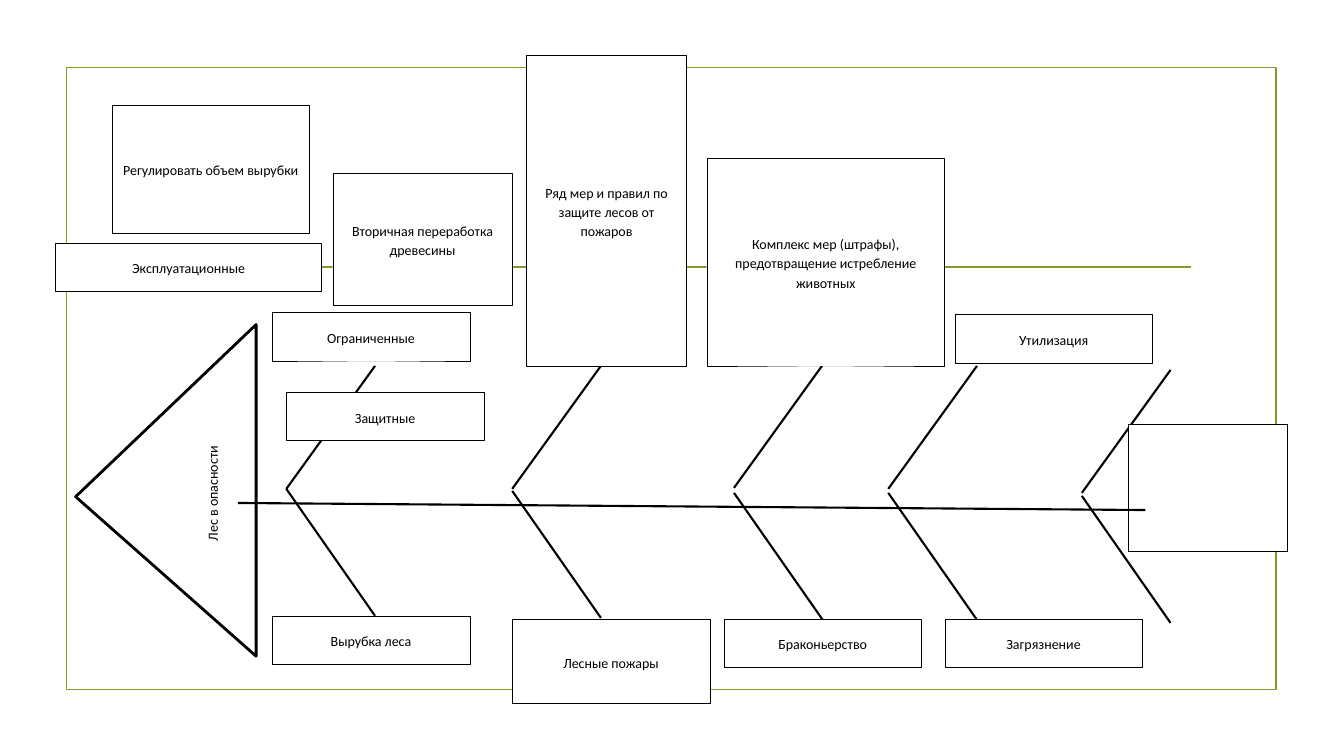
"""Build a fishbone diagram about threats to the forest."""
from lxml.etree import SubElement
from pptx import Presentation
from pptx.dml.color import RGBColor
from pptx.enum.shapes import MSO_CONNECTOR, MSO_SHAPE
from pptx.enum.text import MSO_ANCHOR, PP_ALIGN
from pptx.oxml.ns import qn
from pptx.util import Inches, Pt

INK, PAPER, OLIVE = "000000", "FFFFFF", "83992A"
WIDE, LOW = 1.96, 0.48

deck = Presentation()
deck.slide_width, deck.slide_height = Inches(13.33), Inches(7.5)
slide = deck.slides.add_slide(deck.slide_layouts[6])


def add_box(kind, left, top, width, height, weight, text="", tint=INK):
    box = slide.shapes.add_shape(
        kind, Inches(left), Inches(top), Inches(width), Inches(height))
    box.shadow.inherit = False
    box.fill.solid()
    box.fill.fore_color.rgb = RGBColor.from_string(PAPER)
    box.line.color.rgb = RGBColor.from_string(tint)
    box.line.width = Pt(weight)
    if text:
        frame = box.text_frame
        frame.text = text
        frame.word_wrap = True
        frame.vertical_anchor = MSO_ANCHOR.MIDDLE
        para = frame.paragraphs[0]
        para.alignment = PP_ALIGN.CENTER
        para.line_spacing = 1.15
        para.space_after = Pt(10)
        font = para.runs[0].font
        font.name, font.size = "Calibri", Pt(10)
        font.color.rgb = RGBColor.from_string(INK)
    return box


def add_line(x1, y1, x2, y2, weight=1.5, tint=INK):
    line = slide.shapes.add_connector(
        MSO_CONNECTOR.STRAIGHT, Inches(x1), Inches(y1), Inches(x2), Inches(y2))
    line.line.color.rgb = RGBColor.from_string(tint)
    line.line.width = Pt(weight)
    SubElement(line._element.spPr, qn("a:effectLst"))


border = add_box(MSO_SHAPE.RECTANGLE, 0.66, 0.67, 12, 6.17, 1.25, tint=OLIVE)
border.fill.background()
add_line(1.53, 2.65, 11.81, 2.65, 1.25, OLIVE)

head = add_box(MSO_SHAPE.ISOSCELES_TRIANGLE, 0, 3.97, 3.29, 1.79, 2,
               "Лес в опасности")
head.adjustments[0] = 0.481
head.rotation = 270

ribs = [(2.84, 4.85, 4.85), (5.08, 4.85, 4.87), (7.28, 4.84, 4.89),
        (8.81, 4.85, 4.89), (10.73, 4.89, 4.92)]
for x, upper, lower in ribs:
    add_line(x, upper, x + 0.88, upper - 1.22)
    add_line(x, lower, x + 0.88, lower + 1.26)

labels = [
    (2.84, 3.89, WIDE, LOW, "Защитные"),
    (2.7, 6.11, WIDE, LOW, "Вырубка леса"),
    (5.08, 6.14, WIDE, 0.84, "Лесные пожары"),
    (7.18, 6.14, WIDE, LOW, "Браконьерство"),
    (9.37, 6.14, WIDE, LOW, "Загрязнение"),
    (11.19, 4.21, 1.58, 1.26, ""),
    (5.22, 0.55, 1.59, 3.08, "Ряд мер и правил по защите лесов от пожаров"),
    (7.01, 1.57, 2.36, 2.06,
     "Комплекс мер (штрафы), предотвращение истребление животных"),
    (9.47, 3.12, WIDE, LOW, "Утилизация"),
    (2.7, 3.1, WIDE, LOW, "Ограниченные"),
    (3.3, 1.72, 1.78, 1.31, "Вторичная переработка древесины"),
    (0.55, 2.41, 2.64, LOW, "Эксплуатационные"),
    (1.11, 1.04, WIDE, 1.27, "Регулировать объем вырубки"),
]
for left, top, width, height, text in labels:
    add_box(MSO_SHAPE.RECTANGLE, left, top, width, height, 0.25, text)

add_line(2.36, 4.99, 11.36, 5.06)

deck.save("out.pptx")
